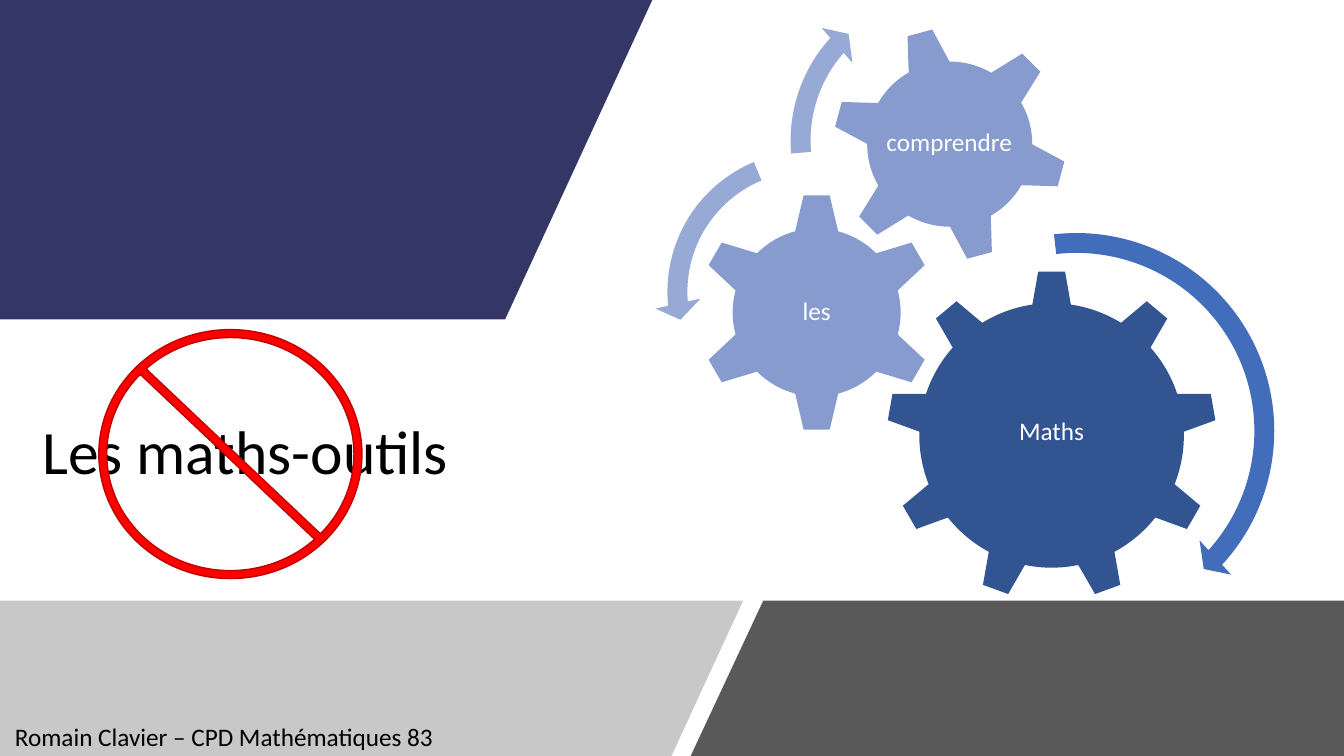
import pptx
import pptx.dml.color
import pptx.enum.shapes
import pptx.enum.text
import pptx.oxml
import pptx.oxml.ns
import pptx.util

Inches = pptx.util.Inches
RGB = pptx.dml.color.RGBColor
SHAPE = pptx.enum.shapes.MSO_SHAPE
ALIGN = pptx.enum.text.PP_ALIGN
ANCHOR = pptx.enum.text.MSO_ANCHOR

NAVY = RGB(0x34, 0x37, 0x65)
SILVER = RGB(0xB2, 0xB2, 0xB2)
CHARCOAL = RGB(0x59, 0x59, 0x59)
RED = RGB(0xFF, 0, 0)
DARK_RED = RGB(0xC0, 0, 0)
DEEP_BLUE = RGB(0x32, 0x54, 0x91)
SOFT_BLUE = RGB(0x87, 0x9B, 0xCE)
ARROW_BLUE = RGB(0x41, 0x6D, 0xBB)
ARROW_PALE = RGB(0x97, 0xA9, 0xD5)
BLACK = RGB(0, 0, 0)
WHITE = RGB(0xFF, 0xFF, 0xFF)

TITLE = ("Les maths-outils", (0.32, 3.46, 6.99, 2.09))
AUTHOR = ("Romain Clavier – CPD Mathématiques 83", (0.05, 7.11, 4.4, 0.4))
PANELS = [
    ([(0, 0), (6.47, 0), (5.01, 3.17), (0, 3.17)], NAVY, 100),
    ([(0, 5.96), (7.37, 5.96), (6.66, 7.5), (0, 7.5)], SILVER, 70),
    ([(7.57, 5.96), (13.33, 5.96), (13.33, 7.5), (6.85, 7.5)], CHARCOAL, 100),
]
BAN = (0.98, 3.27, 2.61, 2.47)
GEARS = [
    ("Maths", SHAPE.GEAR_9, (8.79, 2.68, 3.28), 0, DEEP_BLUE, (9.45, 3.45, 1.96, 1.68)),
    ("les", SHAPE.GEAR_6, (6.91, 1.91, 2.38), 0, SOFT_BLUE, (7.51, 2.51, 1.18, 1.18)),
    ("comprendre", SHAPE.GEAR_6, (8.25, 0.26, 2.34), 345, SOFT_BLUE, (8.76, 0.77, 1.31, 1.31)),
]
ARROWS = [
    (SHAPE.CIRCULAR_ARROW, (8.58, 2.18, 4.19), ARROW_BLUE,
     (0.047, 2.99, 25.397, 158.114, 0.055)),
    (SHAPE.LEFT_CIRCULAR_ARROW, (6.49, 1.37, 3.05), ARROW_PALE,
     (0.065, 4.3, 104.891, 148.378, 0.075)),
    (SHAPE.CIRCULAR_ARROW, (7.71, -0.25, 3.29), ARROW_PALE,
     (0.06, 3.941, 133.138, 105.082, 0.07)),
]


def paint(shape, color):
    shape.shadow.inherit = False
    shape.fill.solid()
    shape.fill.fore_color.rgb = color
    shape.line.fill.background()


def add_panel(shapes, corners, color, opacity):
    points = [(Inches(x), Inches(y)) for x, y in corners]
    builder = shapes.build_freeform(*points[0])
    builder.add_line_segments(points[1:], close=True)
    panel = builder.convert_to_shape()
    paint(panel, color)
    if opacity < 100:
        tint = panel.fill._xPr.find(".//" + pptx.oxml.ns.qn("a:srgbClr"))
        alpha = pptx.oxml.parse_xml(
            f'<a:alpha {pptx.oxml.ns.nsdecls("a")} val="{opacity * 1000}"/>')
        tint.append(alpha)


def add_preset(shapes, preset, box, color, adjustments=()):
    shape = shapes.add_shape(preset, *map(Inches, box))
    paint(shape, color)
    for index, value in enumerate(adjustments):
        shape.adjustments[index] = value
    return shape


def add_label(shapes, text, box, size, color):
    frame = shapes.add_textbox(*map(Inches, box)).text_frame
    frame.word_wrap = True
    paragraph = frame.paragraphs[0]
    paragraph.text = text
    paragraph.font.name = "Calibri"
    paragraph.font.size = pptx.util.Pt(size)
    paragraph.font.color.rgb = color
    return frame


def main():
    deck = pptx.Presentation()
    deck.slide_width, deck.slide_height = Inches(13.33), Inches(7.5)
    shapes = deck.slides.add_slide(deck.slide_layouts[6]).shapes

    title = add_label(shapes, *TITLE, 44, BLACK)
    title.vertical_anchor = ANCHOR.MIDDLE
    title.paragraphs[0].line_spacing = 0.9

    for panel in PANELS:
        add_panel(shapes, *panel)

    ban = add_preset(shapes, SHAPE.NO_SYMBOL, BAN, RED, (0.032,))
    ban.line.color.rgb = DARK_RED
    ban.line.width = pptx.util.Pt(1)

    for word, preset, (left, top, side), rotation, color, word_box in GEARS:
        gear = add_preset(shapes, preset, (left, top, side, side), color)
        gear.rotation = rotation
        label = add_label(shapes, word, word_box, 18, WHITE)
        label.vertical_anchor = ANCHOR.MIDDLE
        label.margin_left = label.margin_right = Inches(0.03)
        label.margin_top = label.margin_bottom = Inches(0.03)
        label.paragraphs[0].alignment = ALIGN.CENTER
        label.paragraphs[0].line_spacing = 0.9

    for preset, (left, top, side), color, adjustments in ARROWS:
        add_preset(shapes, preset, (left, top, side, side), color, adjustments)

    author = add_label(shapes, *AUTHOR, 18, BLACK)
    author.word_wrap = False
    author.auto_size = pptx.enum.text.MSO_AUTO_SIZE.SHAPE_TO_FIT_TEXT

    deck.save("out.pptx")


if __name__ == "__main__":
    main()
